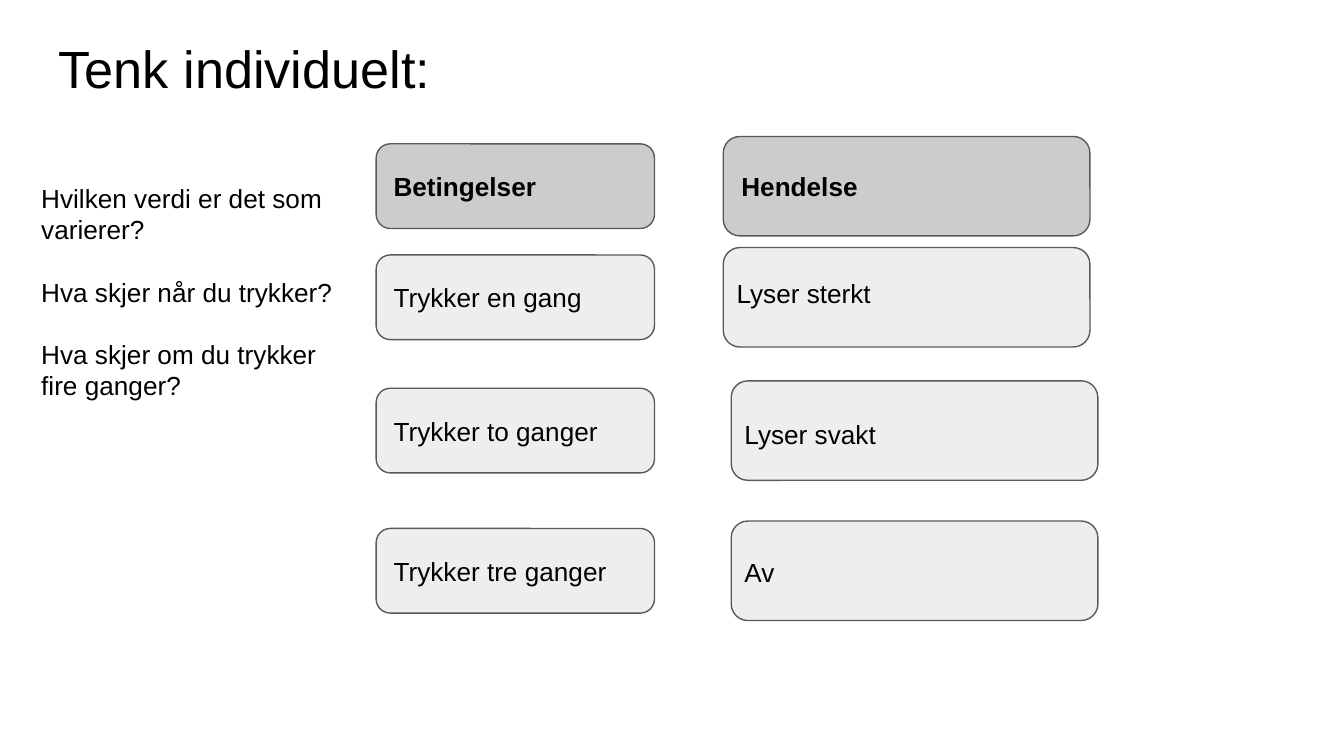
"""Builds a slide that pairs button-press conditions with the events they cause."""
import pptx
import pptx.dml.color
import pptx.enum.shapes
import pptx.enum.text
import pptx.util

Cm = pptx.util.Cm
Pt = pptx.util.Pt
Anchor = pptx.enum.text.MSO_ANCHOR

SLIDE_SIZE = (25.4, 14.29)
FONT = "Arial"
TEXT_COLOR, LINE_COLOR = "000000", "595959"
HEADER_FILL, CARD_FILL = "CCCCCC", "EEEEEE"
TITLE = "Tenk individuelt:"
TITLE_BOX = (0.86, 0.43, 19.18, 2.64)
QUESTIONS = [
    "Hvilken verdi er det som varierer?",
    "Hva skjer når du trykker?",
    "Hva skjer om du trykker fire ganger?",
]
QUESTION_BOX = (0.53, 3.2, 6.2, 5.31)
QUESTION_GAP = 16.5

CONDITION_LEFT, CONDITION_SIZE = 7.11, (5.26, 1.6)
EVENT_SIZE, CAPTION_SIZE = (6.93, 1.88), (4.42, 1.12)
HEADERS = ("Betingelser", "Hendelse")
HEADER_CENTER, HEADER_EVENT_LEFT = 3.52, 13.67
ROWS = [
    {"condition": "Trykker en gang", "event": "Lyser sterkt",
     "center": 5.62, "event_left": 13.67, "caption_top": 5.0},
    {"condition": "Trykker to ganger", "event": "Lyser svakt",
     "center": 8.14, "event_left": 13.82, "caption_top": 7.65},
    {"condition": "Trykker tre ganger", "event": "Av",
     "center": 10.79, "event_left": 13.82, "caption_top": 10.26},
]


def color(value):
    return pptx.dml.color.RGBColor.from_string(value)


def write(shape, paragraphs, size=14, bold=False, anchor=Anchor.TOP, gap=0):
    frame = shape.text_frame
    frame.word_wrap = True
    frame.vertical_anchor = anchor
    frame.margin_left = frame.margin_right = Cm(0.25)
    frame.margin_top = frame.margin_bottom = Cm(0.25)
    for index, text in enumerate(paragraphs):
        paragraph = frame.paragraphs[0] if index == 0 else frame.add_paragraph()
        paragraph.alignment = pptx.enum.text.PP_ALIGN.LEFT
        paragraph.space_before = Pt(gap if index else 0)
        run = paragraph.add_run()
        run.text = text
        run.font.name = FONT
        run.font.size = Pt(size)
        run.font.bold = bold
        run.font.color.rgb = color(TEXT_COLOR)


def add_text(slide, box, paragraphs, **style):
    shape = slide.shapes.add_textbox(*map(Cm, box))
    write(shape, paragraphs, **style)


def add_card(slide, left, center, size, fill, text=None, bold=False):
    width, height = size
    box = (left, center - height / 2, width, height)
    shape = slide.shapes.add_shape(
        pptx.enum.shapes.MSO_SHAPE.ROUNDED_RECTANGLE, *map(Cm, box))
    shape.shadow.inherit = False
    shape.fill.solid()
    shape.fill.fore_color.rgb = color(fill)
    shape.line.color.rgb = color(LINE_COLOR)
    shape.line.width = Pt(0.75)
    if text:
        write(shape, [text], bold=bold, anchor=Anchor.MIDDLE)


def main():
    presentation = pptx.Presentation()
    presentation.slide_width, presentation.slide_height = map(Cm, SLIDE_SIZE)
    slide = presentation.slides.add_slide(presentation.slide_layouts[6])

    add_text(slide, TITLE_BOX, [TITLE], size=28)
    add_text(slide, QUESTION_BOX, QUESTIONS, gap=QUESTION_GAP)

    condition_header, event_header = HEADERS
    add_card(slide, CONDITION_LEFT, HEADER_CENTER, CONDITION_SIZE,
             HEADER_FILL, condition_header, bold=True)
    add_card(slide, HEADER_EVENT_LEFT, HEADER_CENTER, EVENT_SIZE,
             HEADER_FILL, event_header, bold=True)

    for row in ROWS:
        add_card(slide, CONDITION_LEFT, row["center"], CONDITION_SIZE,
                 CARD_FILL, row["condition"])
        add_card(slide, row["event_left"], row["center"], EVENT_SIZE, CARD_FILL)
        caption_box = (row["event_left"], row["caption_top"], *CAPTION_SIZE)
        add_text(slide, caption_box, [row["event"]])

    presentation.save("out.pptx")


if __name__ == "__main__":
    main()
